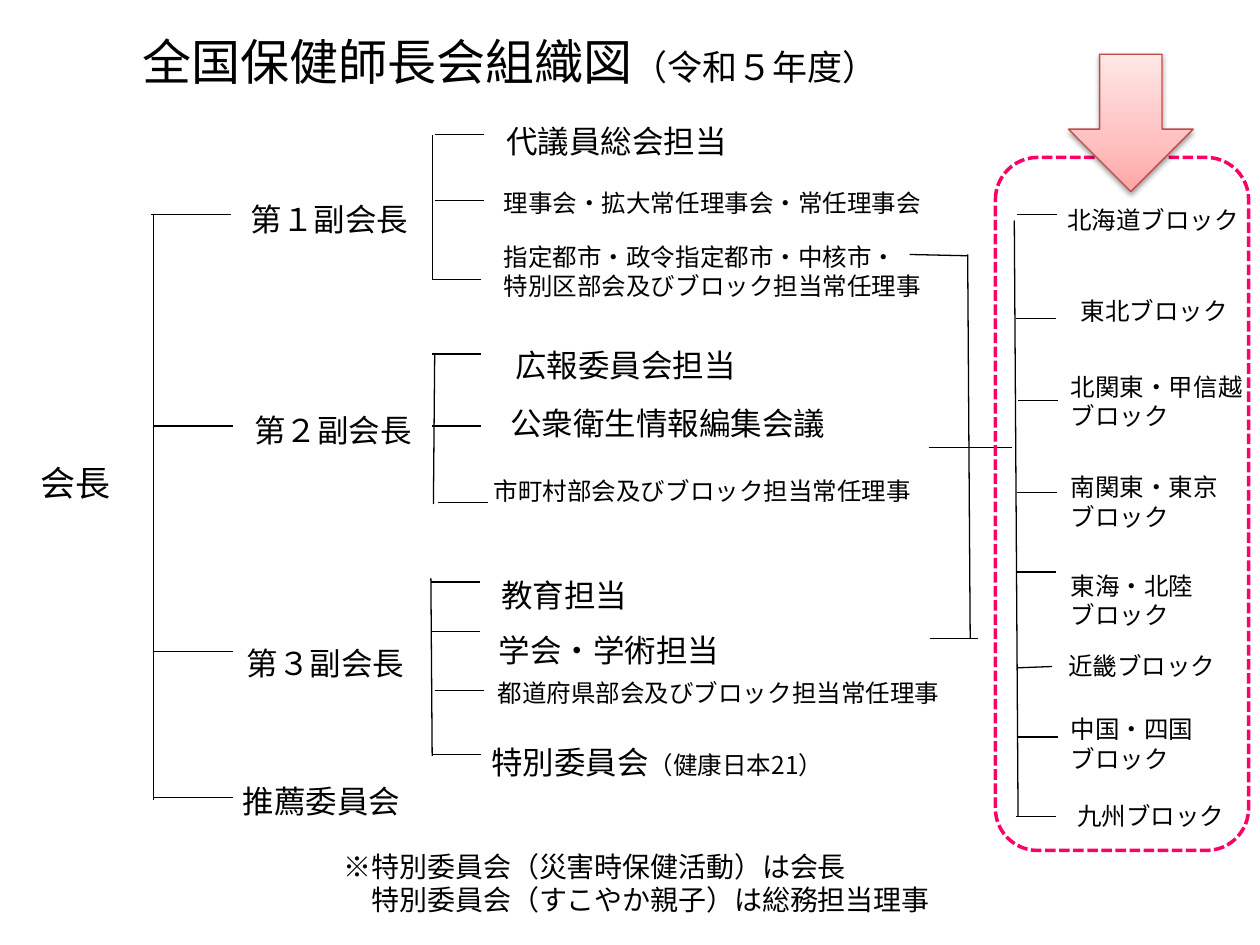
from copy import deepcopy

from lxml import etree
from pptx import Presentation
from pptx import util as u
from pptx.dml.color import RGBColor
from pptx.enum import dml, shapes, text
from pptx.oxml.ns import qn

BLACK = "000000"


def inch(value):
    return u.Cm(value * 2.54)


def colour(value):
    return RGBColor.from_string(value)


class Chart:
    """Style of the organisation chart and the page it is drawn on."""
    font = "Noto Sans CJK JP"
    line_width = 0.75

    def __init__(self, page):
        self.page = page

    def label(self, left, top, width, height, paragraphs, size=18,
              centred=False, middle=False, wrap=True):
        """Each paragraph is a string or a list of (wording, size) spans."""
        frame = self.page.shapes.add_textbox(
            inch(left), inch(top), inch(width), inch(height)).text_frame
        frame.word_wrap = wrap
        if middle:
            frame.vertical_anchor = text.MSO_ANCHOR.MIDDLE
        else:
            frame.auto_size = text.MSO_AUTO_SIZE.SHAPE_TO_FIT_TEXT
        for number, content in enumerate(paragraphs):
            para = frame.add_paragraph() if number else frame.paragraphs[0]
            if centred:
                para.alignment = text.PP_ALIGN.CENTER
            spans = [(content, size)] if isinstance(content, str) else content
            for wording, points in spans:
                span = para.add_run()
                span.text = wording
                span.font.size = u.Pt(points)
                span.font.name = self.font
                span.font.color.rgb = colour(BLACK)
                east_asian = etree.SubElement(span.font._element, qn("a:ea"))
                east_asian.set("typeface", self.font)

    def line(self, x1, y1, x2, y2):
        line = self.page.shapes.add_connector(
            shapes.MSO_CONNECTOR.STRAIGHT, inch(x1), inch(y1), inch(x2), inch(y2))
        line.line.color.rgb = colour(BLACK)
        line.line.width = u.Pt(self.line_width)
        etree.SubElement(line._element.spPr, qn("a:effectLst"))

    def branches(self, length, starts):
        for x, y in starts:
            self.line(x, y, x + length, y)

    def shape(self, kind, left, top, width, height, line, line_width):
        shape = self.page.shapes.add_shape(
            kind, inch(left), inch(top), inch(width), inch(height))
        shape.shadow.inherit = False
        shape.fill.background()
        shape.line.color.rgb = colour(line)
        shape.line.width = u.Pt(line_width)
        return shape

    def dashed_frame(self, *place):
        frame = self.shape(shapes.MSO_SHAPE.FLOWCHART_ALTERNATE_PROCESS,
                           *place, "FF0066", 2)
        frame.line.dash_style = dml.MSO_LINE.SQUARE_DOT

    def gradient_arrow(self, *place):
        arrow = self.shape(shapes.MSO_SHAPE.DOWN_ARROW, *place, "BF4C48", 0.75)
        arrow.fill.gradient()
        arrow.fill.gradient_angle = 90
        properties = arrow._element.spPr
        stop_list = properties.find(".//" + qn("a:gsLst"))
        stop_list.append(deepcopy(stop_list[-1]))
        stops = [(0, "FFA6A5"), (0.35, "FFC0BF"), (1, "FFE7E7")]
        for stop, (position, value) in zip(arrow.fill.gradient_stops, stops):
            stop.position = position
            stop.color.rgb = colour(value)
        shadow = etree.SubElement(
            properties.find(qn("a:effectLst")), qn("a:outerShdw"),
            blurRad="40000", dist="20000", dir="5400000", rotWithShape="0")
        tint = etree.SubElement(shadow, qn("a:srgbClr"), val=BLACK)
        etree.SubElement(tint, qn("a:alpha"), val="38000")


def main():
    deck = Presentation()
    deck.slide_width, deck.slide_height = inch(10), inch(7.5)
    chart = Chart(deck.slides.add_slide(deck.slide_layouts[6]))

    # Title
    chart.label(0.35, 0.13, 7.4, 0.7,
                [[("全国保健師長会組織図", 28), ("（令和５年度）", 20)]],
                centred=True, middle=True)

    # President and vice presidents
    chart.label(0.13, 3.61, 0.94, 0.44, ["会長"], 20, centred=True)
    for left, top, name in [(1.89, 1.54, "第１副会長"), (1.92, 3.21, "第２副会長"),
                            (1.86, 5.06, "第３副会長"), (1.83, 6.16, "推薦委員会")]:
        chart.label(left, top, 1.97, 0.4, [name])
    chart.line(1.22, 1.7, 1.22, 6.35)
    chart.branches(0.63, [(1.2, 1.7), (1.22, 3.38), (1.22, 5.17), (1.22, 6.33)])

    # Duties of each vice president
    for left, top, width, name in [
            (3.92, 0.92, 2.99, "代議員総会担当"),
            (3.99, 2.7, 2.68, "広報委員会担当"),
            (3.88, 4.52, 2.68, "教育担当"),
            (3.86, 4.96, 3.11, "学会・学術担当")]:
        chart.label(left, top, width, 0.4, [name])
    chart.label(3.95, 3.16, 2.73, 0.4, ["公衆衛生情報編集会議"], wrap=False)
    chart.label(3.8, 5.85, 3.53, 0.4, [[("特別委員会", 18), ("（健康日本21）", 14)]])
    for left, top, width, name in [
            (3.9, 1.44, 3.64, "理事会・拡大常任理事会・常任理事会"),
            (3.82, 3.73, 3.99, "市町村部会及びブロック担当常任理事"),
            (3.85, 5.33, 3.82, "都道府県部会及びブロック担当常任理事")]:
        chart.label(left, top, width, 0.34, [name], 14)
    chart.label(3.9, 1.87, 3.6, 0.57, ["指定都市・政令指定都市・中核市・",
                                       "特別区部会及びブロック担当常任理事"], 14)
    for trunk in [(3.43, 1.07, 3.43, 2.22), (3.45, 2.81, 3.44, 4),
                  (3.42, 4.59, 3.43, 6)]:
        chart.line(*trunk)
    chart.branches(0.39, [
        (3.45, 1.07), (3.45, 1.59), (3.43, 2.22),
        (3.43, 2.81), (3.43, 3.38), (3.48, 3.99),
        (3.42, 4.62), (3.42, 5.01), (3.45, 5.48), (3.43, 5.99)])

    # Bracket from the duties to the blocks
    for stroke in [(7.22, 2.02, 7.68, 2.03), (7.37, 3.55, 8.03, 3.55),
                   (7.38, 5.07, 7.76, 5.07), (7.68, 2.02, 7.7, 5.07)]:
        chart.line(*stroke)

    # Regional blocks
    chart.line(8.05, 1.75, 8.08, 6.48)
    chart.branches(0.32, [(8.07, 1.7), (8.06, 2.53), (8.08, 3.18), (8.07, 3.91),
                          (8.06, 4.54), (8.08, 5.85), (8.06, 6.48)])
    chart.line(8.08, 5.3, 8.35, 5.29)
    for left, top, width, name in [
            (8.37, 1.58, 1.58, "北海道ブロック"), (8.48, 2.3, 1.46, "東北ブロック"),
            (8.38, 5.12, 1.46, "近畿ブロック"), (8.45, 6.31, 1.58, "九州ブロック")]:
        chart.label(left, top, width, 0.34, [name], 14)
    for top, lines in [(2.9, ["北関東・甲信越ブロック"]),
                       (3.7, ["南関東・東京", "ブロック"]),
                       (4.48, ["東海・北陸", "ブロック"]),
                       (5.62, ["中国・四国", "ブロック"])]:
        chart.label(8.4, top, 1.58, 0.57, lines, 14)
    chart.dashed_frame(7.9, 1.25, 2.01, 5.5)
    chart.gradient_arrow(8.48, 0.43, 0.99, 1.09)

    # Footnote
    chart.label(2.63, 6.69, 5.21, 1.18, ["※特別委員会（災害時保健活動）は会長",
                                         "　特別委員会（すこやか親子）は総務担当理事"], 16)

    deck.save("out.pptx")


if __name__ == "__main__":
    main()
